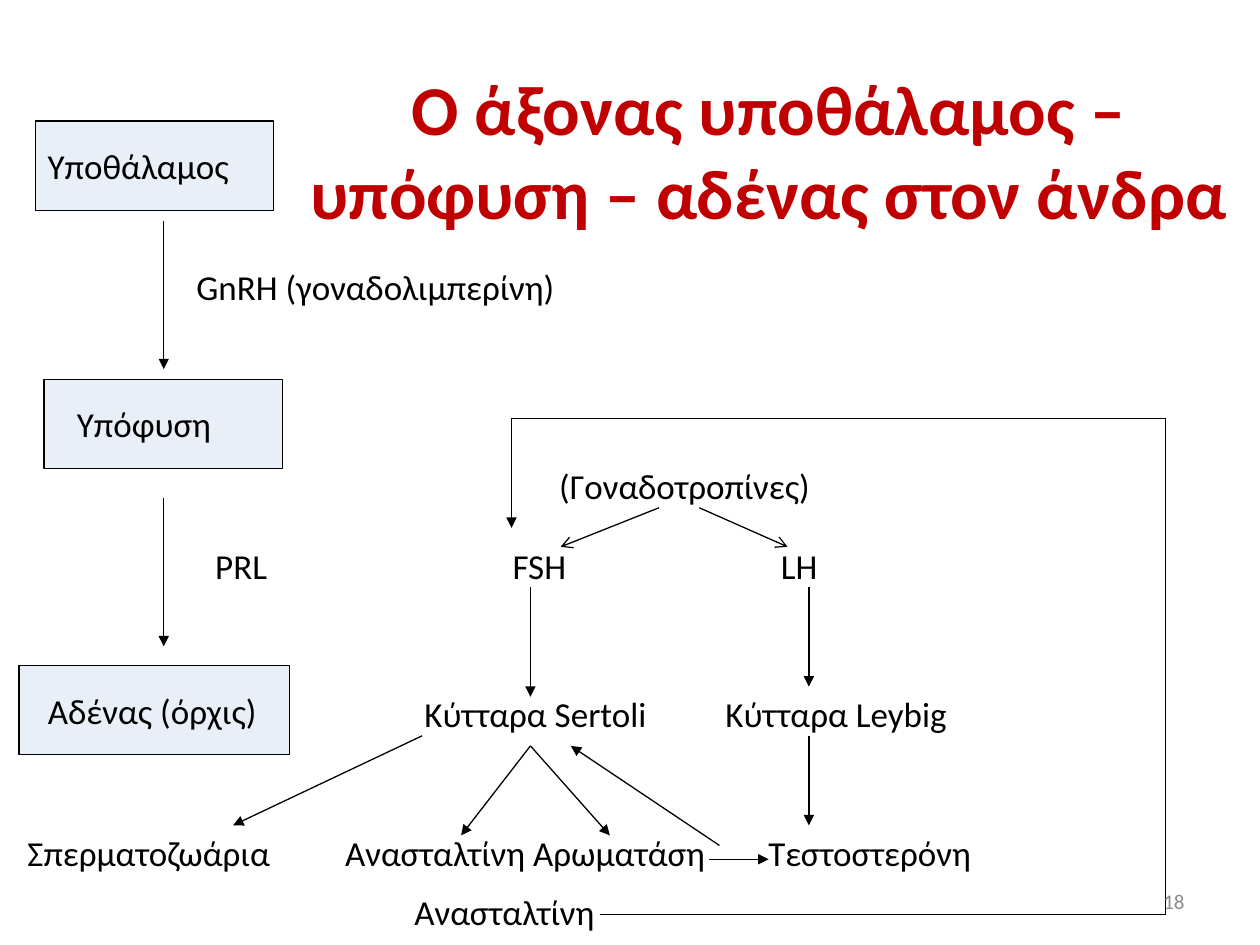
from dataclasses import dataclass
from itertools import pairwise

from lxml.etree import SubElement
from pptx import Presentation
from pptx.dml.color import RGBColor
from pptx.enum.shapes import MSO_CONNECTOR, MSO_SHAPE
from pptx.enum.text import MSO_ANCHOR, PP_ALIGN
from pptx.oxml.ns import qn
from pptx.util import Inches, Pt


@dataclass(frozen=True)
class Theme:
    font: str = "Calibri"
    title_size: int = 40
    body_size: int = 20
    number_size: int = 12
    title: RGBColor = RGBColor(0xC0, 0x00, 0x00)
    ink: RGBColor = RGBColor(0x00, 0x00, 0x00)
    number: RGBColor = RGBColor(0x8C, 0x8C, 0x8C)
    organ: RGBColor = RGBColor(0x4F, 0x81, 0xBD)
    organ_opacity: int = 12000
    line_width: float = 0.75


@dataclass(frozen=True)
class Box:
    left: float
    top: float
    width: float
    height: float

    def inside(self, x, y, width, height):
        return Box(self.left + x, self.top + y, width, height)

    def point(self, x, y):
        return Inches(self.left + x), Inches(self.top + y)

    def lengths(self):
        return [Inches(v) for v in (self.left, self.top, self.width, self.height)]


THEME = Theme()
LABEL_HEIGHT = 0.44


def write(frame, wording, size, color, align, anchor, bold=False):
    frame.word_wrap = True
    frame.vertical_anchor = anchor
    paragraph = frame.paragraphs[0]
    paragraph.alignment = align
    run = paragraph.add_run()
    run.text = wording
    run.font.name = THEME.font
    run.font.size = Pt(size)
    run.font.bold = bold
    run.font.color.rgb = color


def add_text(slide, box, wording, size=THEME.body_size, color=THEME.ink,
             align=PP_ALIGN.LEFT, anchor=MSO_ANCHOR.TOP, bold=False):
    label = slide.shapes.add_textbox(*box.lengths())
    write(label.text_frame, wording, size, color, align, anchor, bold)


def add_line(slide, box, start, end, head="triangle"):
    line = slide.shapes.add_connector(
        MSO_CONNECTOR.STRAIGHT, *box.point(*start), *box.point(*end))
    line.line.color.rgb = THEME.ink
    line.line.width = Pt(THEME.line_width)
    if head:
        SubElement(line.line._get_or_add_ln(), qn("a:tailEnd"), type=head)
    SubElement(line._element.spPr, qn("a:effectLst"))


def add_organ(slide, box, wording, indent):
    organ = slide.shapes.add_shape(MSO_SHAPE.RECTANGLE, *box.lengths())
    organ.shadow.inherit = False
    organ.fill.solid()
    organ.fill.fore_color.rgb = THEME.organ
    tint = organ.fill._xPr.find(qn("a:solidFill"))[0]
    SubElement(tint, qn("a:alpha"), val=str(THEME.organ_opacity))
    organ.line.color.rgb = THEME.ink
    organ.line.width = Pt(THEME.line_width)
    organ.text_frame.margin_left = Inches(indent)
    write(organ.text_frame, wording, THEME.body_size, THEME.ink,
          PP_ALIGN.LEFT, MSO_ANCHOR.MIDDLE)


def add_title(slide, box):
    add_text(slide, box, "Ο άξονας υποθάλαμος – υπόφυση – αδένας στον άνδρα",
             THEME.title_size, THEME.title, PP_ALIGN.CENTER, MSO_ANCHOR.MIDDLE, True)


def add_axis(slide, box):
    organs = [
        ("Υποθάλαμος", 0.13, 0, 1.89, 0.1),
        ("Υπόφυση", 0.2, 2.05, 1.89, 0.26),
        ("Αδένας (όρχις)", 0, 4.32, 2.15, 0.23),
    ]
    for wording, x, y, width, indent in organs:
        add_organ(slide, box.inside(x, y, width, 0.71), wording, indent)
    for y in (0.79, 2.99):
        add_line(slide, box, (1.15, y), (1.15, y + 1.18))
    for wording, x, y, width in [("GnRH (γοναδολιμπερίνη)", 1.31, 1.1, 3.2),
                                 ("PRL", 1.46, 3.31, 0.8)]:
        add_text(slide, box.inside(x, y, width, LABEL_HEIGHT), wording)


def add_gonadotropins(slide, box):
    labels = [
        ("(Γοναδοτροπίνες)", 4.22, 0.32, 2.3),
        ("FSH", 3.85, 0.95, 0.8),
        ("LH", 5.98, 0.95, 0.8),
        ("Κύτταρα Sertoli", 3.15, 2.13, 2.1),
        ("Κύτταρα Leybig", 5.54, 2.13, 2.1),
        ("Σπερματοζωάρια", 0, 3.23, 2.2),
        ("Ανασταλτίνη Αρωματάση", 2.52, 3.23, 3.39),
        ("Τεστοστερόνη", 5.88, 3.23, 1.9),
        ("Ανασταλτίνη", 3.07, 3.7, 1.97),
    ]
    for wording, x, y, width in labels:
        add_text(slide, box.inside(x, y, width, LABEL_HEIGHT), wording)

    for start, end in [((5.11, 0.71), (4.33, 1.02)), ((5.43, 0.71), (6.13, 1.02))]:
        add_line(slide, box, start, end, "arrow")

    sertoli = (4.09, 2.6)
    effects = [
        ((4.09, 1.34), (4.09, 2.21)),
        ((6.3, 1.34), (6.3, 2.13)),
        ((6.3, 2.52), (6.3, 3.23)),
        ((3.23, 2.52), (1.73, 3.23)),
        (sertoli, (3.54, 3.31)),
        (sertoli, (4.72, 3.31)),
        ((5.59, 3.39), (4.41, 2.6)),
        ((5.51, 3.5), (5.98, 3.5)),
    ]
    for start, end in effects:
        add_line(slide, box, start, end)

    feedback = [(4.64, 3.94), (9.13, 3.94), (9.13, 0), (3.94, 0), (3.94, 0.87)]
    for start, end in pairwise(feedback):
        add_line(slide, box, start, end, "triangle" if end == feedback[-1] else None)


def add_slide_number(slide, box):
    add_text(slide, box, "18", THEME.number_size, THEME.number,
             PP_ALIGN.RIGHT, MSO_ANCHOR.MIDDLE)


def main():
    deck = Presentation()
    deck.slide_width, deck.slide_height = Inches(10), Inches(7.5)
    slide = deck.slides.add_slide(deck.slide_layouts[6])
    add_title(slide, Box(2.32, 0.6, 7.56, 1.18))
    add_axis(slide, Box(0.15, 0.96, 4.5, 5.03))
    add_gonadotropins(slide, Box(0.12, 3.32, 9.13, 4.14))
    add_slide_number(slide, Box(7.17, 6.95, 2.33, 0.4))
    deck.save("out.pptx")


if __name__ == "__main__":
    main()
